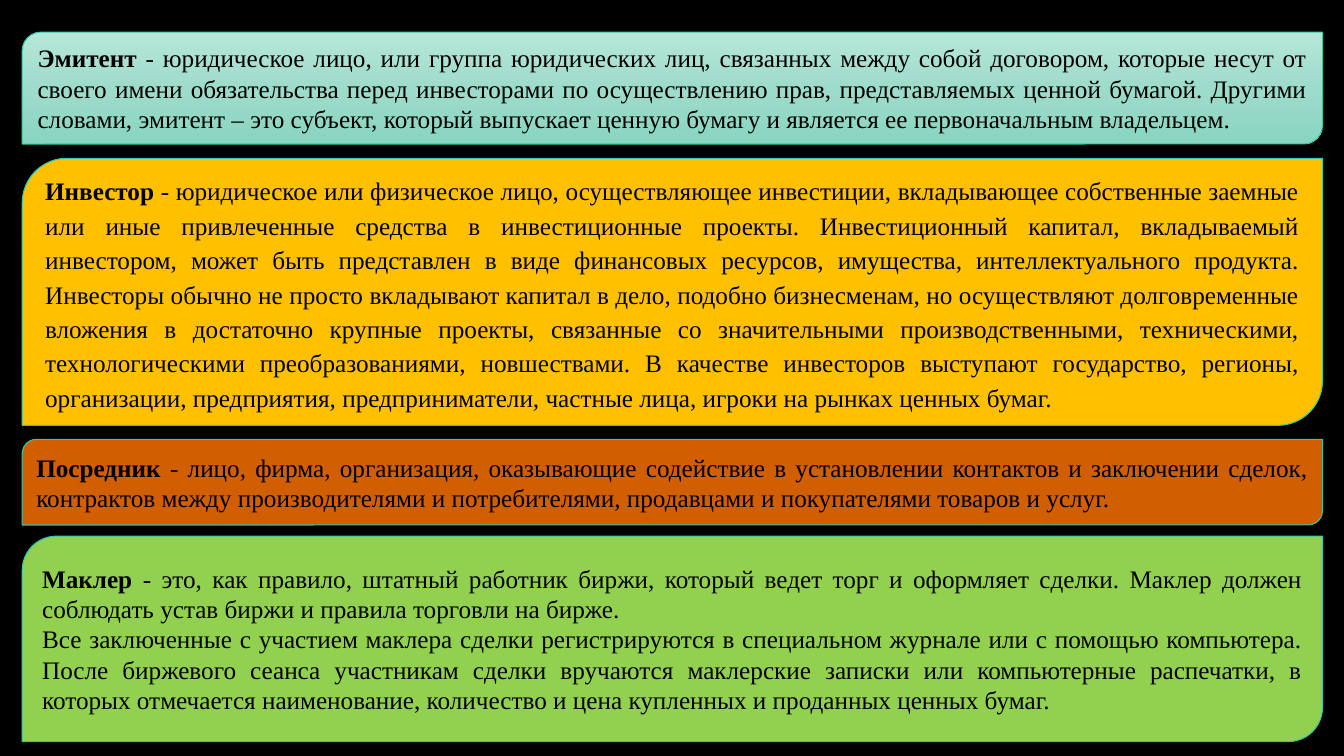
from copy import deepcopy

from pptx import Presentation
from pptx.dml.color import RGBColor
from pptx.enum.shapes import MSO_SHAPE
from pptx.enum.text import MSO_ANCHOR, PP_ALIGN
from pptx.oxml.ns import qn
from pptx.util import Cm, Pt

COLORS = {
    "back": "000000", "text": "000000", "border": "32C7A9",
    "mint_top": "B6E7D9", "mint_mid": "9DDBCA", "mint_bottom": "89D5C0",
    "amber": "FFC000", "rust": "D15E01", "green": "92D050",
}
LEFT, WIDTH = 0.56, 32.77

# Top, height, fill, line spacing, term, definition paragraphs
CARDS = [
    (0.81, 2.82, ("mint_top", "mint_mid", "mint_bottom"), None, "Эмитент ", [
        "- юридическое лицо, или группа юридических лиц, связанных между собой "
        "договором, которые несут от своего имени обязательства перед инвесторами "
        "по осуществлению прав, представляемых ценной бумагой. Другими словами, "
        "эмитент – это субъект, который выпускает ценную бумагу и является ее "
        "первоначальным владельцем."]),
    (3.99, 6.73, ("amber",), 1.14, "Инвестор ", [
        "- юридическое или физическое лицо, осуществляющее инвестиции, вкладывающее "
        "собственные заемные или иные привлеченные средства в инвестиционные проекты. "
        "Инвестиционный капитал, вкладываемый инвестором, может быть представлен в "
        "виде финансовых ресурсов, имущества, интеллектуального продукта. Инвесторы "
        "обычно не просто вкладывают капитал в дело, подобно бизнесменам, но "
        "осуществляют долговременные вложения в достаточно крупные проекты, связанные "
        "со значительными производственными, техническими, технологическими "
        "преобразованиями, новшествами. В качестве инвесторов выступают государство, "
        "регионы, организации, предприятия, предприниматели, частные лица, игроки на "
        "рынках ценных бумаг."]),
    (11.07, 2.16, ("rust",), None, "Посредник ", [
        "- лицо, фирма, организация, оказывающие содействие в установлении контактов "
        "и заключении сделок, контрактов между производителями и потребителями, "
        "продавцами и покупателями товаров и услуг."]),
    (13.51, 5.18, ("green",), None, "Маклер ", [
        "- это, как правило, штатный работник биржи, который ведет торг и оформляет "
        "сделки. Маклер должен соблюдать устав биржи и правила торговли на бирже.",
        "Все заключенные с участием маклера сделки регистрируются в специальном "
        "журнале или с помощью компьютера. После биржевого сеанса участникам сделки "
        "вручаются маклерские записки или компьютерные распечатки, в которых "
        "отмечается наименование, количество и цена купленных и проданных ценных "
        "бумаг."]),
]


def rgb(name):
    return RGBColor.from_string(COLORS[name])


class Deck:
    font = {"name": "Times New Roman", "size": Pt(18)}

    def __init__(self):
        self.prs = Presentation()
        self.prs.slide_width, self.prs.slide_height = Cm(33.87), Cm(19.05)

    def add_slide(self, back):
        self.slide = self.prs.slides.add_slide(self.prs.slide_layouts[6])
        fill = self.slide.background.fill
        fill.solid()
        fill.fore_color.rgb = rgb(back)

    def paint(self, s, names):
        if len(names) == 1:
            s.fill.solid()
            s.fill.fore_color.rgb = rgb(names[0])
            return
        s.fill.gradient()
        s.fill.gradient_angle = 270
        # The default gradient has two stops; a middle one is added
        first = s._element.spPr.find(".//" + qn("a:gs"))
        first.addnext(deepcopy(first))
        for stop, name, pos in zip(s.fill.gradient_stops, names, (0, 0.52, 1)):
            stop.color.rgb = rgb(name)
            stop.position = pos

    def run(self, p, text, bold):
        r = p.add_run()
        r.text = text
        for key, value in {**self.font, "bold": bold}.items():
            setattr(r.font, key, value)
        r.font.color.rgb = rgb("text")

    def card(self, top, height, fill, spacing, term, paragraphs):
        s = self.slide.shapes.add_shape(
            MSO_SHAPE.ROUND_2_DIAG_RECTANGLE,
            Cm(LEFT), Cm(top), Cm(WIDTH), Cm(height))
        s.shadow.inherit = False
        self.paint(s, fill)
        s.line.color.rgb = rgb("border")
        s.line.width = Pt(0.75)
        tf = s.text_frame
        for key, value in {"word_wrap": True,
                           "vertical_anchor": MSO_ANCHOR.MIDDLE}.items():
            setattr(tf, key, value)
        for i, text in enumerate(paragraphs):
            p = tf.add_paragraph() if i else tf.paragraphs[0]
            for key, value in {"alignment": PP_ALIGN.JUSTIFY,
                               "line_spacing": spacing}.items():
                setattr(p, key, value)
            if i == 0:
                self.run(p, term, True)
            self.run(p, text, False)


def main():
    deck = Deck()
    deck.add_slide("back")
    # Definition cards
    for card in CARDS:
        deck.card(*card)
    deck.prs.save("out.pptx")


if __name__ == "__main__":
    main()
